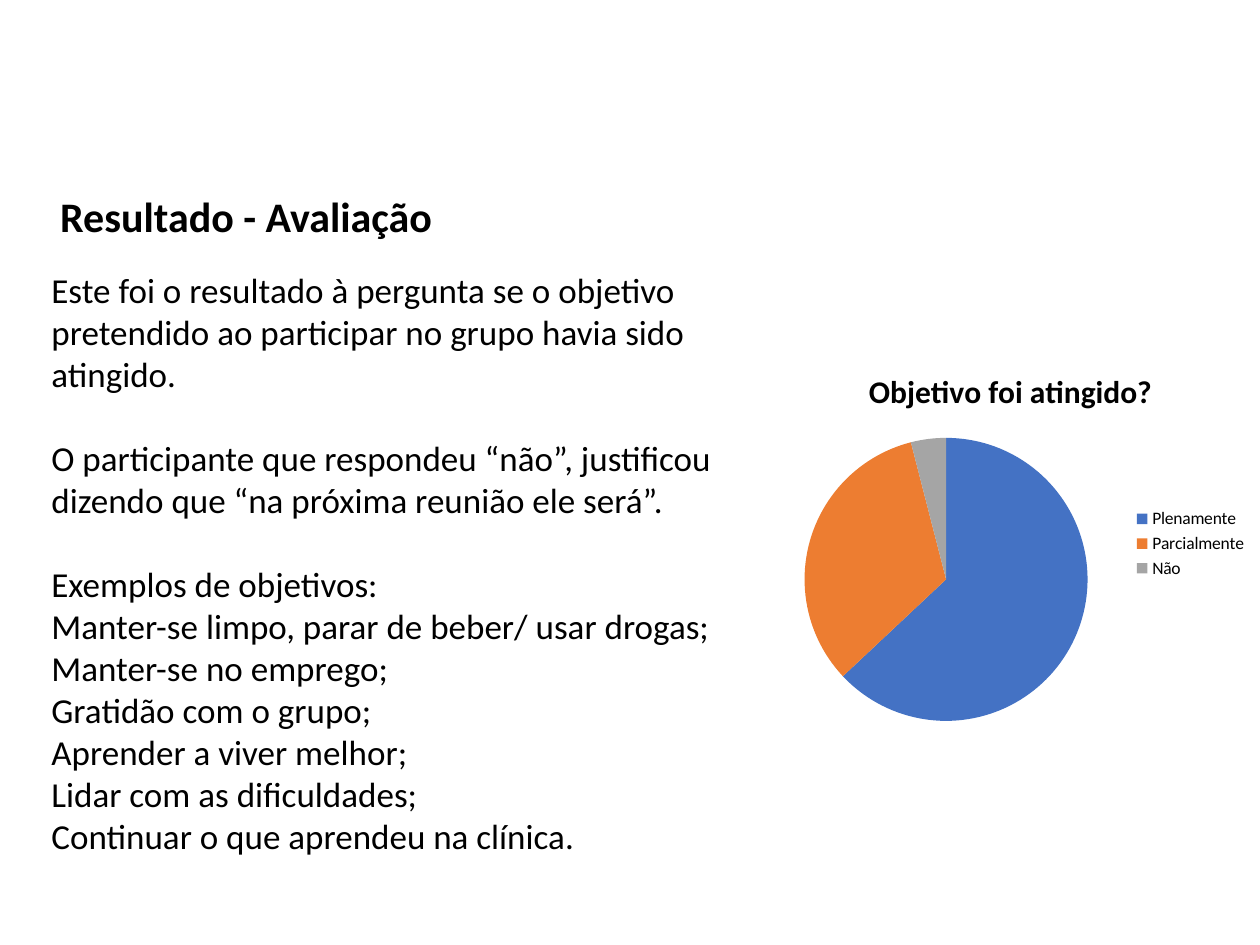
from pptx import Presentation
from pptx.chart.data import CategoryChartData
from pptx.dml.color import RGBColor
from pptx.enum.chart import XL_CHART_TYPE, XL_LEGEND_POSITION
from pptx.util import Inches, Pt

PIE = XL_CHART_TYPE.PIE
LEGEND_RIGHT = XL_LEGEND_POSITION.RIGHT

HEADING = "Resultado - Avaliação"
BODY_GROUPS = [
    ["Este foi o resultado à pergunta se o objetivo pretendido ao participar "
     "no grupo havia sido atingido."],
    ["O participante que respondeu “não”, justificou dizendo que "
     "“na próxima reunião ele será”."],
    ["Exemplos de objetivos:",
     "Manter-se limpo, parar de beber/ usar drogas;",
     "Manter-se no emprego;",
     "Gratidão com o grupo;",
     "Aprender a viver melhor;",
     "Lidar com as dificuldades;",
     "Continuar o que aprendeu na clínica."],
]
CHART_TITLE = "Objetivo foi atingido?"
ANSWERS = {"Plenamente": 63, "Parcialmente": 33, "Não": 4}

BLACK = RGBColor(0, 0, 0)
THEME = {
    "heading": {"name": "Calibri", "size": Pt(24), "bold": True},
    "body": {"name": "Calibri", "size": Pt(20), "bold": False},
    "chart_title": {"name": "Calibri", "size": Pt(18), "bold": True},
    "chart": {"name": "Calibri", "size": Pt(10), "bold": False},
    "slices": ["4472C4", "ED7D31", "A5A5A5"],
    "group_gap": Pt(24),
}

WIDTH, HEIGHT = Inches(10), Inches(7.5)
# left, top, width, height as percentages of the slide
AREAS = {
    "heading": (3.8, 20.13, 85, 8),
    "body": (3.1, 27.73, 59, 64.13),
    "chart": (60.4, 36.93, 39.6, 41.2),
}


def area(name):
    return [int(share * full / 100)
            for share, full in zip(AREAS[name], (WIDTH, HEIGHT) * 2)]


def style(font, role):
    for key, value in THEME[role].items():
        setattr(font, key, value)
    font.color.rgb = BLACK


def add_text(s, role, groups):
    """Write one paragraph per line, with a gap between groups."""
    tf = s.shapes.add_textbox(*area(role)).text_frame
    tf.word_wrap = True
    p = None
    for group in groups:
        for line in group:
            first = p is None
            p = tf.paragraphs[0] if first else tf.add_paragraph()
            if line is group[0] and not first:
                p.space_before = THEME["group_gap"]
            r = p.add_run()
            r.text = line
            style(r.font, role)
    return tf


def add_pie(s):
    data = CategoryChartData()
    data.categories = list(ANSWERS)
    data.add_series(CHART_TITLE, list(ANSWERS.values()))
    chart = s.shapes.add_chart(PIE, *area("chart"), data).chart
    style(chart.font, "chart")
    chart.has_title = True
    p = chart.chart_title.text_frame.paragraphs[0]
    r = p.add_run()
    r.text = CHART_TITLE
    style(r.font, "chart_title")
    chart.has_legend = True
    chart.legend.position = LEGEND_RIGHT
    chart.legend.include_in_layout = False
    plot = chart.plots[0]
    plot.vary_by_categories = True
    for i, color in enumerate(THEME["slices"]):
        fill = plot.series[0].points[i].format.fill
        fill.solid()
        fill.fore_color.rgb = RGBColor.from_string(color)


def main():
    prs = Presentation()
    prs.slide_width, prs.slide_height = WIDTH, HEIGHT
    s = prs.slides.add_slide(prs.slide_layouts[6])
    add_text(s, "heading", [[HEADING]]).paragraphs[0].line_spacing = 0.9
    add_text(s, "body", BODY_GROUPS)
    add_pie(s)
    prs.save("out.pptx")


if __name__ == "__main__":
    main()
